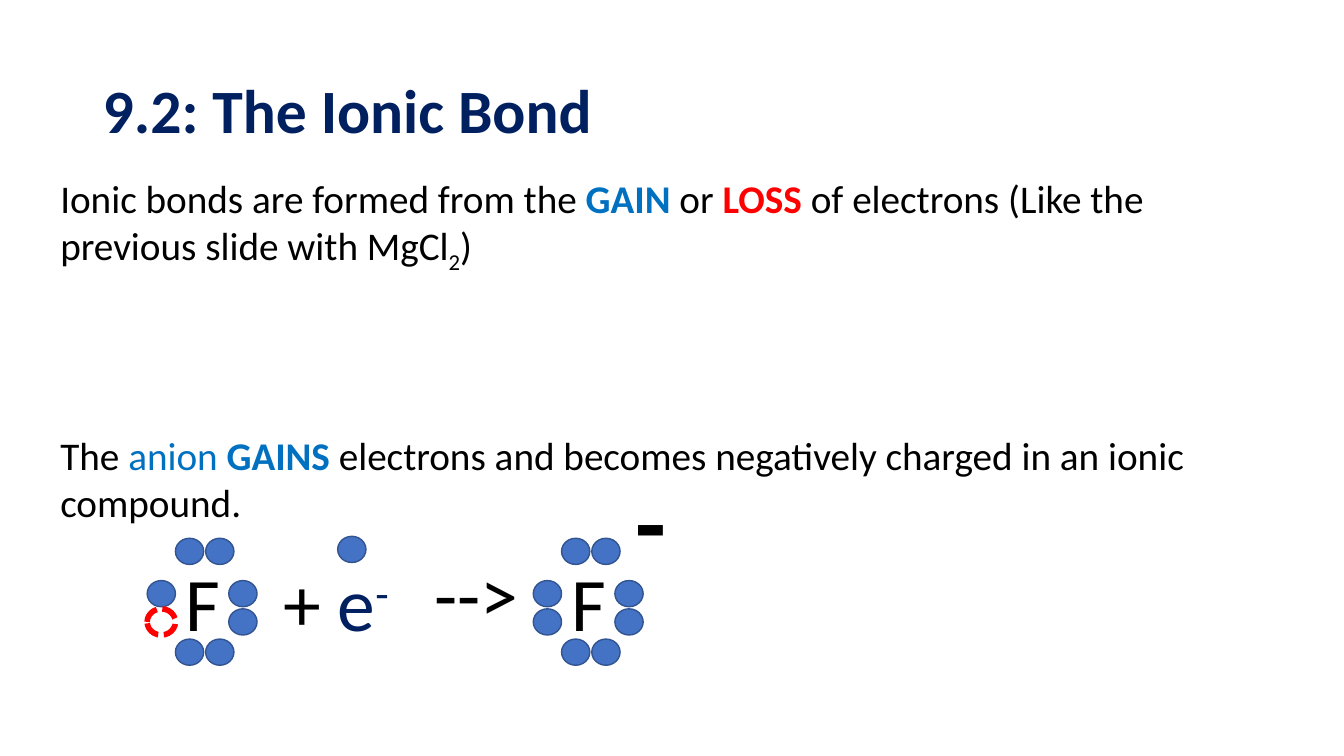
import pptx
import pptx.util
import pptx.dml.color
import pptx.enum.dml
import pptx.enum.shapes
import pptx.enum.text

Pt = pptx.util.Pt
RGB = pptx.dml.color.RGBColor

NAVY = RGB(0x00, 0x20, 0x60)
BLACK = RGB(0, 0, 0)
BLUE = RGB(0x00, 0x70, 0xC0)
RED = RGB(0xFF, 0, 0)
DOT = RGB(0x44, 0x72, 0xC4)
EDGE = RGB(0x32, 0x54, 0x91)

DOT_W, DOT_H = 20.2, 18.7
PLAIN = {"color": BLACK}
GAIN = {"color": BLUE, "bold": True}
LOSS = {"color": RED, "bold": True}


def add_runs(para, size, runs):
    """Add (text, format) pairs; "base" is a baseline shift in percent."""
    for text, form in runs:
        run = para.add_run()
        run.text = text
        look = {"name": "Calibri", "size": Pt(size), "bold": False, **form}
        run.font.color.rgb = look.pop("color")
        base = look.pop("base", 0)
        for key, value in look.items():
            setattr(run.font, key, value)
        if base:
            run.font._element.set("baseline", str(base * 1000))


def add_title(slide, box, text):
    title = slide.shapes.title
    for key, value in zip(("left", "top", "width", "height"), box):
        setattr(title, key, Pt(value))
    frame = title.text_frame
    frame.auto_size = pptx.enum.text.MSO_AUTO_SIZE.NONE
    frame.vertical_anchor = pptx.enum.text.MSO_ANCHOR.MIDDLE
    para = frame.paragraphs[0]
    para.alignment = pptx.enum.text.PP_ALIGN.LEFT
    para.line_spacing = 0.9
    add_runs(para, 44, [(text, {"color": NAVY, "bold": True})])


def add_text(slide, box, size, runs):
    frame = slide.shapes.add_textbox(*map(Pt, box)).text_frame
    frame.word_wrap = True
    frame.auto_size = pptx.enum.text.MSO_AUTO_SIZE.SHAPE_TO_FIT_TEXT
    add_runs(frame.paragraphs[0], size, runs)


def add_dot(slide, left, top, gap=False):
    """Draw an electron, or a dashed red ring where one is missing."""
    dot = slide.shapes.add_shape(pptx.enum.shapes.MSO_SHAPE.OVAL,
                                 *map(Pt, (left, top, DOT_W, DOT_H)))
    dot.shadow.inherit = False
    dot.line.color.rgb = RED if gap else EDGE
    dot.line.width = Pt(4 if gap else 1)
    if gap:
        dot.fill.background()
        dot.line.dash_style = pptx.enum.dml.MSO_LINE.SQUARE_DOT
    else:
        dot.fill.solid()
        dot.fill.fore_color.rgb = DOT


def add_atom(slide, left, top, label, gap=False):
    """Draw a symbol with four electron pairs; gap empties the last place."""
    add_text(slide, (left + 20.2, top + 9.2, 38.2, 72.7), 54, [(label, PLAIN)])
    places = [(x, y) for y in (0, 72) for x in (20.2, 41.8)]
    places += [(x, y) for x in (58.3, 0) for y in (30.2, 50.4)]
    for x, y in places:
        add_dot(slide, left + x, top + y, gap and (x, y) == places[-1])


def add_gain(slide, left, top):
    """Draw the equation in which fluorine takes up an electron."""
    add_atom(slide, left, top, "F", gap=True)
    add_text(slide, (left + 90, top + 9.3, 112.3, 72.7), 54,
             [("+ ", PLAIN), ("e", {"color": NAVY}),
              ("-", {"color": NAVY, "base": 30})])
    add_dot(slide, left + 136.1, top - 1.4)
    add_text(slide, (left + 198, top + 2.9, 78.5, 72.7), 54, [("-->", PLAIN)])
    add_atom(slide, left + 275.8, top, "F")
    add_text(slide, (left + 342, top - 60.5, 38.2, 94.3), 72,
             [("-", {"color": BLACK, "bold": True})])


def add_bond(deck):
    slide = deck.slides.add_slide(deck.slide_layouts[5])
    add_title(slide, (66.2, 28.8, 828, 104.4), "9.2: The Ionic Bond")
    add_text(slide, (36, 121, 887.8, 74.9), 28, [
        ("Ionic bonds are formed from the ", PLAIN), ("GAIN", GAIN),
        (" or ", PLAIN), ("LOSS", LOSS),
        (" of electrons (Like the previous slide with MgCl", PLAIN),
        ("2", {"color": BLACK, "base": -25}), (")", PLAIN)])
    add_text(slide, (36, 304.6, 887.8, 74.9), 28, [
        ("The ", PLAIN), ("anion ", {"color": BLUE}), ("GAINS", GAIN),
        (" electrons and becomes negatively charged in an ionic compound.",
         PLAIN)])
    add_gain(slide, 105.1, 384.5)


def main():
    deck = pptx.Presentation()
    deck.slide_width, deck.slide_height = Pt(960), Pt(540)
    add_bond(deck)
    deck.save("out.pptx")


if __name__ == "__main__":
    main()
